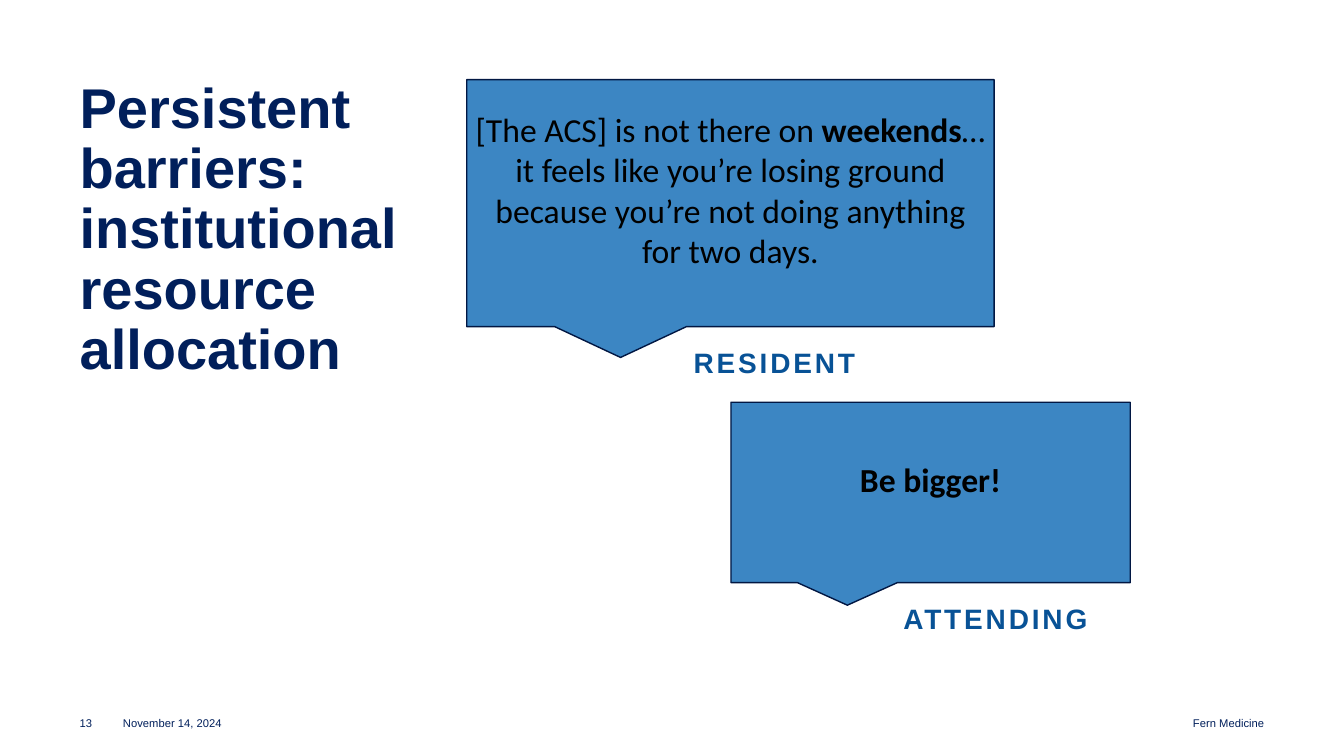
from pptx import Presentation
from pptx.dml.color import RGBColor
from pptx.enum.shapes import MSO_SHAPE
from pptx.enum.text import MSO_ANCHOR, MSO_AUTO_SIZE, PP_ALIGN
from pptx.util import Inches, Pt

COLORS = {"navy": "011F5B", "label": "085296", "callout": "3C86C3", "outline": "011743", "black": "000000"}
TITLE = {"name": "Arial", "size": Pt(40), "bold": True}
FOOTER = {"name": "Arial", "size": Pt(8), "bold": False}
LABEL = {"name": "Arial", "size": Pt(20), "bold": True}
QUOTE = {"name": "Calibri", "size": Pt(24), "bold": False}


def set_frame(box, anchor, margins=(0, 0, 0, 0)):
    frame = box.text_frame
    frame.word_wrap = True
    frame.auto_size = MSO_AUTO_SIZE.NONE
    frame.vertical_anchor = anchor
    for side, margin in zip(("left", "top", "right", "bottom"), margins):
        setattr(frame, f"margin_{side}", Inches(margin))
    return frame.paragraphs[0]


def add_span(para, text, font_format, color):
    span = para.add_run()
    span.text = text
    for name, value in font_format.items():
        setattr(span.font, name, value)
    span.font.color.rgb = RGBColor.from_string(COLORS[color])
    return span


deck = Presentation()
deck.slide_width, deck.slide_height = Inches(13.33), Inches(7.5)
page = deck.slides.add_slide(deck.slide_layouts[5])

title = page.shapes.title
title.left, title.top, title.width, title.height = map(Inches, (0.79, 0.79, 4.23, 0.61))
para = set_frame(title, MSO_ANCHOR.TOP)
para.alignment = PP_ALIGN.LEFT
para.line_spacing = 0.9
add_span(para, "Persistent barriers: institutional resource allocation", TITLE, "navy")

callouts = [
    ((4.63, 0.79, 5.23, 2.45), [
        ("[The ACS] is not there on ", False),
        ("weekends", True),
        ("…it feels like you’re losing ground because you’re not doing anything for two days.", False),
    ]),
    ((7.25, 3.99, 3.96, 1.79), [("Be bigger!", True)]),
]
for place, quote in callouts:
    callout = page.shapes.add_shape(MSO_SHAPE.RECTANGULAR_CALLOUT, *map(Inches, place))
    callout.shadow.inherit = False
    callout.fill.solid()
    callout.fill.fore_color.rgb = RGBColor.from_string(COLORS["callout"])
    callout.line.color.rgb = RGBColor.from_string(COLORS["outline"])
    callout.line.width = Pt(1)
    para = set_frame(callout, MSO_ANCHOR.MIDDLE, (0.08, 0.04, 0.08, 0.31))
    para.alignment = PP_ALIGN.CENTER
    for text, bold in quote:
        add_span(para, text, {**QUOTE, "bold": bold}, "black")

for speaker, left, top in [("RESIDENT", 6.88, 3.43), ("ATTENDING", 8.96, 5.97)]:
    box = page.shapes.add_textbox(Inches(left), Inches(top), Inches(3), Inches(0.38))
    span = add_span(set_frame(box, MSO_ANCHOR.TOP), speaker, LABEL, "label")
    span._r.get_or_add_rPr().set("spc", "200")

footers = [
    ("13", 0.79, 0.43, PP_ALIGN.LEFT),
    ("November 14, 2024", 1.22, 3, PP_ALIGN.LEFT),
    ("Fern Medicine", 9.9, 2.64, PP_ALIGN.RIGHT),
]
for text, left, width, alignment in footers:
    box = page.shapes.add_textbox(Inches(left), Inches(7.04), Inches(width), Inches(0.2))
    para = set_frame(box, MSO_ANCHOR.BOTTOM)
    para.alignment = alignment
    add_span(para, text, FOOTER, "navy")

deck.save("out.pptx")
